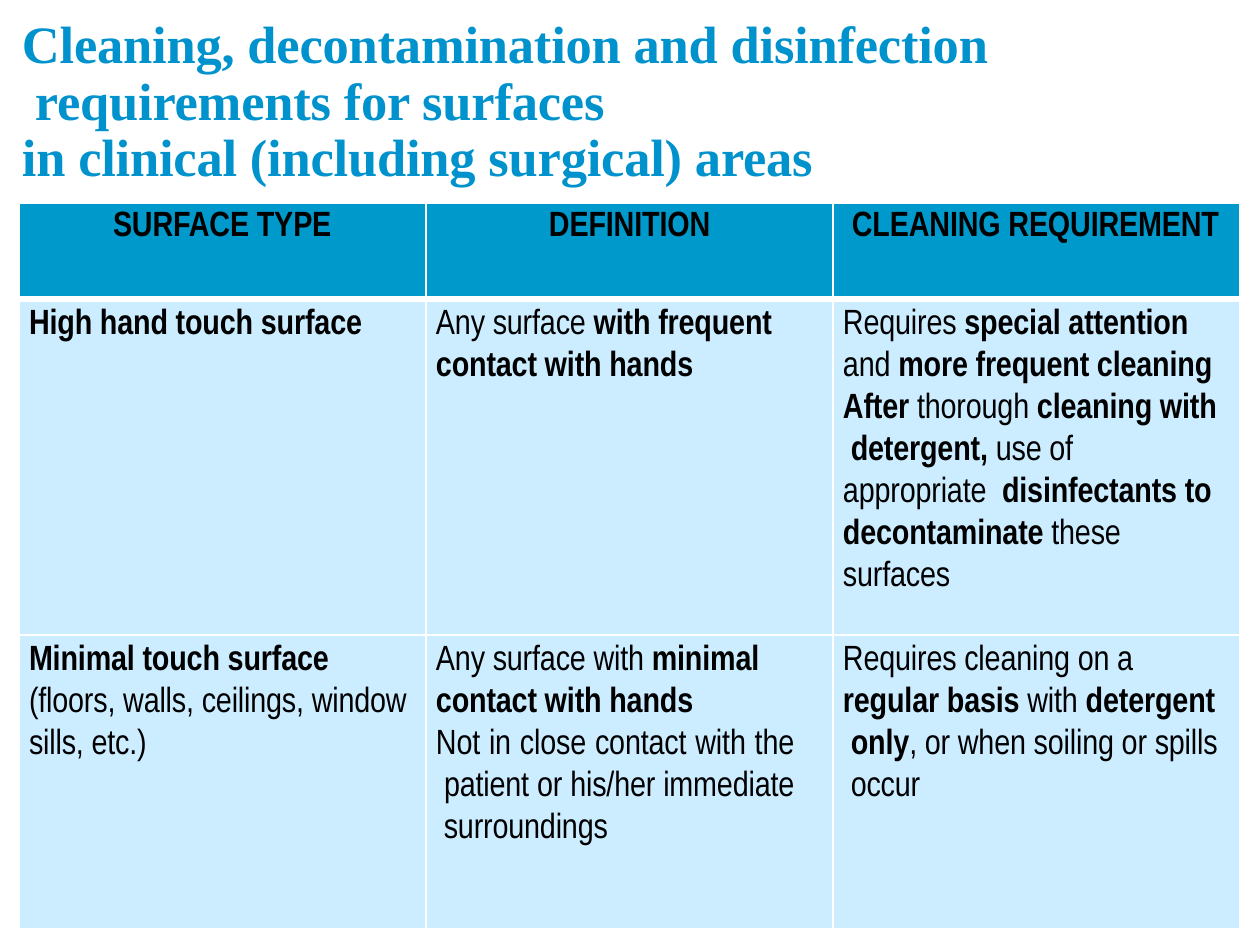
from dataclasses import dataclass

from lxml import etree
from pptx import Presentation
from pptx.dml.color import RGBColor
from pptx.enum.text import MSO_ANCHOR, MSO_AUTO_SIZE, PP_ALIGN
from pptx.oxml.ns import qn
from pptx.util import Emu, Pt

LEFT, JUSTIFY = PP_ALIGN.LEFT, PP_ALIGN.JUSTIFY
TOP = MSO_ANCHOR.TOP
FIT_SHAPE = MSO_AUTO_SIZE.SHAPE_TO_FIT_TEXT
PX_PER_INCH = 126


@dataclass(frozen=True)
class Theme:
    title_font: str = "Times New Roman"
    body_font: str = "Arial Narrow"
    title_size: int = 30
    body_size: int = 20
    title: str = "0092CC"
    text: str = "000000"
    header: str = "0099CC"
    body: str = "CCECFF"
    border: str = "FFFFFF"
    thin: float = 1.5
    thick: float = 4.25
    tracking: float = -0.1


THEME = Theme()
COLUMN_WIDTH = 407
ROW_HEIGHTS = [96, 336, 294]
HEADER_INDENTS = [94, 123, 19]
BODY_INDENT = 10
RIGHT_INDENTS = [0, 39, 20]

TITLE = [
    "**Cleaning, decontamination and disinfection  requirements for surfaces**",
    "**in clinical (including surgical) areas**",
]
HEADERS = ["SURFACE TYPE", "DEFINITION", "CLEANING REQUIREMENT"]
SURFACES = [
    [
        ["**High hand touch surface**"],
        ["Any surface **with frequent  contact with hands**"],
        ["Requires **special attention  **and **more frequent cleaning  After **"
         "thorough **cleaning with  detergent, **use of appropriate  "
         "**disinfectants to  decontaminate **these  surfaces"],
    ],
    [
        ["**Minimal touch surface  **(floors, walls, ceilings, window  sills, etc.)"],
        ["Any surface with **minimal  contact with hands**",
         "Not in close contact with the  patient or his/her immediate  surroundings"],
        ["Requires cleaning on a  **regular basis **with **detergent  only**, "
         "or when soiling or spills  occur"],
    ],
]


def px(n):
    return Emu(round(n * 914400 / PX_PER_INCH))


def rgb(color):
    return RGBColor.from_string(color)


def add_runs(p, marked, font, size, color):
    for i, part in enumerate(marked.split("**")):
        if not part:
            continue
        r = p.add_run()
        r.text = part
        r.font.name = font
        r.font.size = Pt(size)
        r.font.bold = i % 2 == 1
        r.font.color.rgb = rgb(color)
        r.font._element.set("spc", str(round(THEME.tracking * 100)))


def format_paragraph(p, line, left, right=0, before=0, align=LEFT):
    p.alignment = align
    p.line_spacing = Pt(line)
    p.space_before = Pt(before)
    pPr = p._p.get_or_add_pPr()
    pPr.set("marL", str(px(left)))
    pPr.set("marR", str(px(right)))
    pPr.set("indent", "0")


def paragraph(tf, i):
    return tf.add_paragraph() if i else tf.paragraphs[0]


def add_title(s):
    sp = s.shapes.title
    sp.left, sp.top, sp.width, sp.height = map(px, (20, 9, 978, 180))
    tf = sp.text_frame
    tf.margin_left = tf.margin_right = tf.margin_bottom = 0
    tf.margin_top = px(9)
    tf.word_wrap = True
    tf.auto_size = FIT_SHAPE
    tf.vertical_anchor = TOP
    for i, text in enumerate(TITLE):
        p = paragraph(tf, i)
        format_paragraph(p, 32.2, 2, before=0 if i else 5.2)
        add_runs(p, text, THEME.title_font, THEME.title_size, THEME.title)


def set_borders(cell, top, bottom):
    tcPr = cell._tc.get_or_add_tcPr()
    sides = {"L": THEME.thin, "R": THEME.thin, "T": top, "B": bottom}
    for side, width in sides.items():
        ln = etree.SubElement(tcPr, qn(f"a:ln{side}"), w=str(Pt(width)))
        fill = etree.SubElement(ln, qn("a:solidFill"))
        etree.SubElement(fill, qn("a:srgbClr"), val=THEME.border)


def format_cell(cell, color, top, bottom):
    cell.margin_left = cell.margin_right = cell.margin_top = cell.margin_bottom = 0
    cell.vertical_anchor = TOP
    set_borders(cell, top, bottom)
    cell.fill.solid()
    cell.fill.fore_color.rgb = rgb(color)


def fill_header(cell, text, indent):
    format_cell(cell, THEME.header, THEME.thin, THEME.thick)
    p = cell.text_frame.paragraphs[0]
    format_paragraph(p, 23.6, indent)
    add_runs(p, f"**{text}**", THEME.body_font, THEME.body_size, THEME.text)


def fill_body(cell, texts, right, top):
    format_cell(cell, THEME.body, top, THEME.thin)
    cell.margin_top = px(1)
    for i, text in enumerate(texts):
        p = paragraph(cell.text_frame, i)
        format_paragraph(p, 24, BODY_INDENT, right, align=JUSTIFY if i else LEFT)
        add_runs(p, text, THEME.body_font, THEME.body_size, THEME.text)


def add_surface_table(s):
    columns = len(HEADERS)
    frame = s.shapes.add_table(len(ROW_HEIGHTS), columns, px(19), px(203),
                               px(COLUMN_WIDTH * columns), px(sum(ROW_HEIGHTS)))
    table = frame.table
    table.horz_banding = False
    for row, height in zip(table.rows, ROW_HEIGHTS):
        row.height = px(height)
    for c, (header, indent) in enumerate(zip(HEADERS, HEADER_INDENTS)):
        table.columns[c].width = px(COLUMN_WIDTH)
        fill_header(table.cell(0, c), header, indent)
    for r, surface in enumerate(SURFACES, start=1):
        top = THEME.thick if r == 1 else THEME.thin
        for c, texts in enumerate(surface):
            fill_body(table.cell(r, c), texts, RIGHT_INDENTS[c], top)


def main():
    prs = Presentation()
    prs.slide_width, prs.slide_height = px(1260), px(945)
    s = prs.slides.add_slide(prs.slide_layouts[5])
    add_title(s)
    add_surface_table(s)
    prs.save("out.pptx")


if __name__ == "__main__":
    main()
